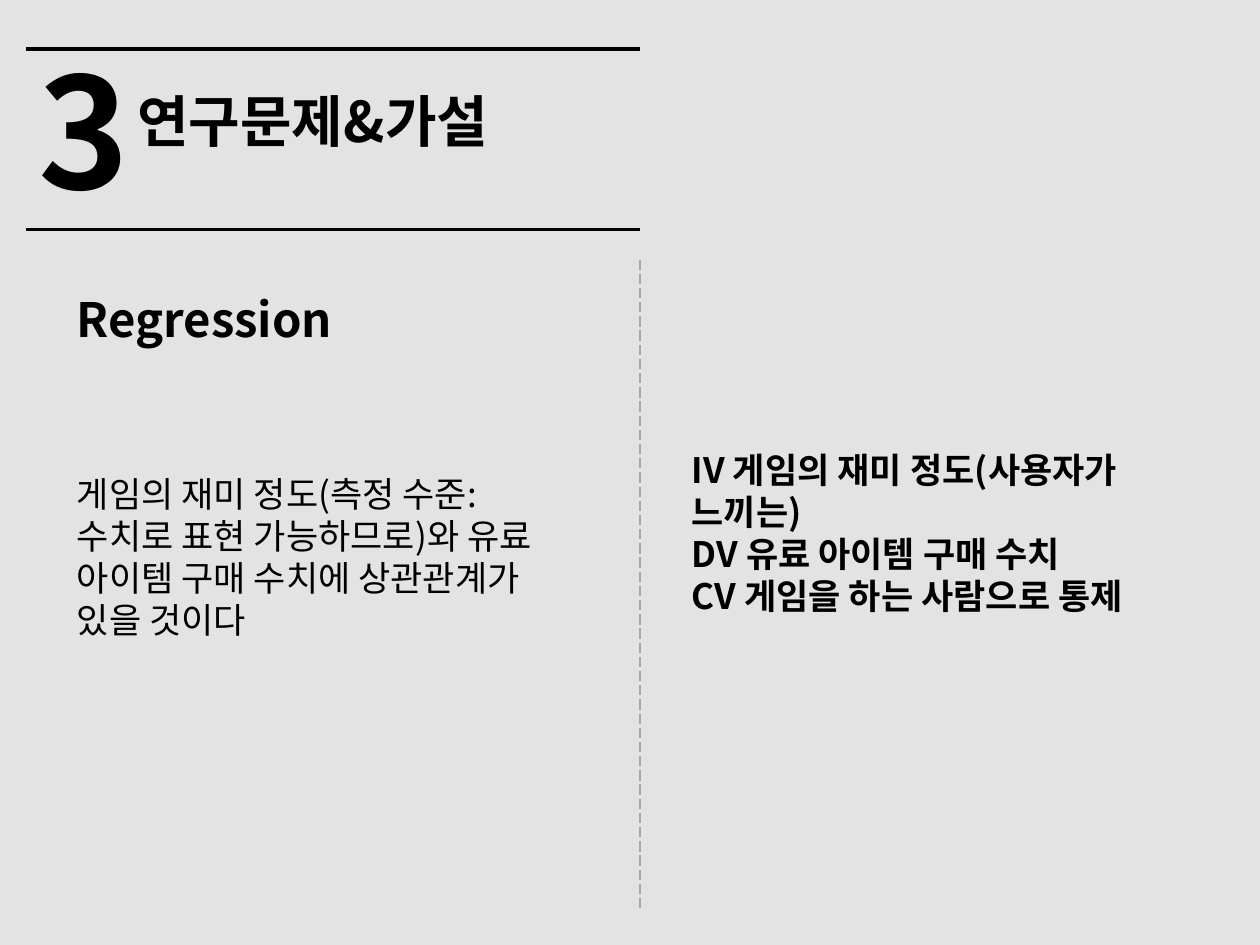
from pptx import Presentation
from pptx.dml.color import RGBColor
from pptx.enum.dml import MSO_LINE
from pptx.enum.shapes import MSO_CONNECTOR
from pptx.enum.text import MSO_ANCHOR, MSO_AUTO_SIZE, PP_ALIGN
from pptx.oxml.ns import qn
from pptx.util import Inches, Pt
from lxml.etree import SubElement

FONT = "Noto Sans CJK KR"
COLORS = {"paper": "E3E3E3", "ink": "000000", "divider": "A6A6A6"}
LEFT, MIDDLE = 0.21, 5.08
HEADER_TOP, HEADER_BOTTOM = 0.39, 1.82


def color(name):
    return RGBColor.from_string(COLORS[name])


def add_line(page, start, end, name, width, dash=None):
    points = [Inches(value) for value in (*start, *end)]
    connector = page.shapes.add_connector(MSO_CONNECTOR.STRAIGHT, *points)
    connector.line.color.rgb = color(name)
    connector.line.width = Pt(width)
    if dash:
        connector.line.dash_style = dash
    SubElement(connector._element.spPr, qn("a:effectLst"))


def fill_text(box, place, lines):
    """Place a box and write its lines, each (text, size, bold, space before)."""
    box.left, box.top, box.width, box.height = (Inches(v) for v in place)
    frame = box.text_frame
    frame.text = "\n".join(line[0] for line in lines)
    frame.word_wrap = True
    frame.auto_size = MSO_AUTO_SIZE.NONE
    frame.vertical_anchor = MSO_ANCHOR.TOP
    for para, (_, size, bold, before) in zip(frame.paragraphs, lines):
        para.alignment = PP_ALIGN.LEFT
        para.space_before = Pt(before)
        para.font.size = Pt(size)
        para.font.bold = bold
        para.font.color.rgb = color("ink")
        properties = para._p.get_or_add_pPr()
        properties.set("marL", "0")
        properties.set("indent", "0")
        SubElement(properties, qn("a:buNone"))
        # The run carries the typefaces, for Latin and Korean letters alike.
        for span in para.runs:
            span.font.name = FONT
            SubElement(span._r.get_or_add_rPr(), qn("a:ea"), typeface=FONT)
        # Paragraph defaults must follow the bullet setting.
        properties.append(properties.find(qn("a:defRPr")))
        for span in para.runs:
            span.font.size, span.font.bold = Pt(size), bold
            span.font.color.rgb = color("ink")


def main():
    deck = Presentation()
    deck.slide_width, deck.slide_height = Inches(10), Inches(7.5)
    page = deck.slides.add_slide(deck.slide_layouts.get_by_name("Two Content"))
    page.background.fill.solid()
    page.background.fill.fore_color.rgb = color("paper")

    for y in (HEADER_TOP, HEADER_BOTTOM):
        add_line(page, (LEFT, y), (MIDDLE, y), "ink", 2)
    add_line(page, (MIDDLE, 2.06), (MIDDLE, 7.21), "divider", 0.75,
             MSO_LINE.LONG_DASH)

    number = page.shapes.add_textbox(0, 0, 0, 0)
    fill_text(number, (LEFT, 0.23, 0.83, 1.58), [("3", 88, True, 0)])
    fill_text(page.shapes.title, (0.99, 0.64, 4.27, 0.64),
              [("연구문제&가설", 32, True, 0)])
    hypothesis, variables = page.placeholders[1], page.placeholders[2]
    fill_text(hypothesis, (0.51, 2.25, 3.94, 2.91), [
        ("Regression", 27, True, 0),
        ("게임의 재미 정도(측정 수준:수치로 표현 가능하므로)와 "
         "유료 아이템 구매 수치에 상관관계가 있을 것이다", 20, False, 72),
    ])
    fill_text(variables, (5.39, 3.51, 4.02, 1.78), [
        ("IV 게임의 재미 정도(사용자가 느끼는)", 20, True, 0),
        ("DV 유료 아이템 구매 수치", 20, True, 0),
        ("CV 게임을 하는 사람으로 통제", 20, True, 0),
    ])
    deck.save("out.pptx")


if __name__ == "__main__":
    main()
